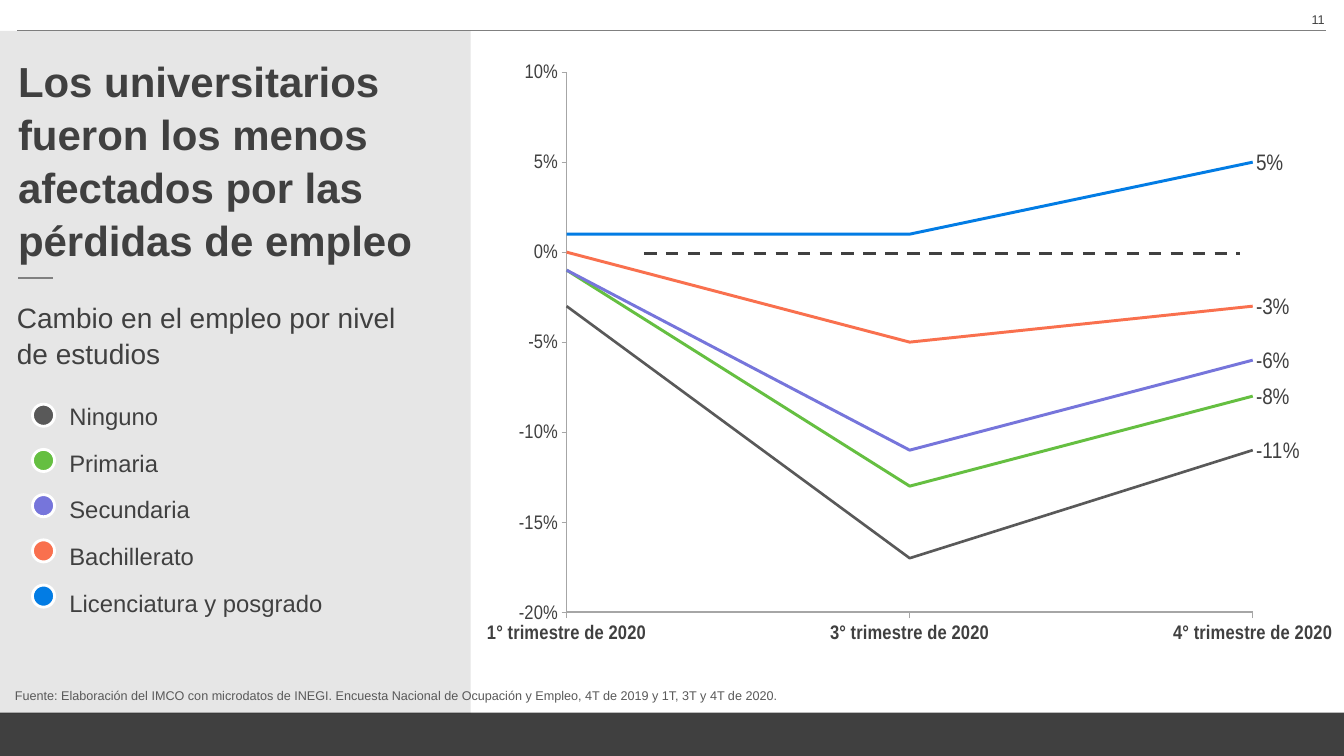
"""Build the slide on employment change by level of education."""
from dataclasses import dataclass

from lxml.etree import SubElement
from pptx import Presentation
from pptx.chart.data import CategoryChartData
from pptx.dml.color import RGBColor
from pptx.enum.chart import XL_AXIS_CROSSES as Crosses
from pptx.enum.chart import XL_CHART_TYPE as ChartType
from pptx.enum.chart import XL_LABEL_POSITION as LabelPosition
from pptx.enum.chart import XL_MARKER_STYLE as Marker
from pptx.enum.chart import XL_TICK_LABEL_POSITION as TickLabels
from pptx.enum.chart import XL_TICK_MARK as Tick
from pptx.enum.dml import MSO_LINE as Dash
from pptx.enum.shapes import MSO_CONNECTOR as Connector
from pptx.enum.shapes import MSO_SHAPE as Shape
from pptx.enum.text import MSO_ANCHOR as Anchor
from pptx.enum.text import PP_ALIGN as Align
from pptx.oxml import parse_xml
from pptx.oxml.ns import nsdecls, qn
from pptx.util import Pt


@dataclass(frozen=True)
class Theme:
    font: str = "Arial"
    ink: str = "404040"
    note_ink: str = "595959"
    rule: str = "808080"
    axis: str = "A6A6A6"
    panel: str = "0D0D0D"
    white: str = "FFFFFF"
    title: int = 30
    subtitle: int = 20
    legend: int = 17
    label: int = 16
    tick: int = 14
    small: int = 9


THEME = Theme()
QUARTERS = ["1° trimestre de 2020", "3° trimestre de 2020", "4° trimestre de 2020"]
LEVELS = [
    ("Ninguno", "595959", (-0.03, -0.17, -0.11)),
    ("Primaria", "65BF41", (-0.01, -0.13, -0.08)),
    ("Secundaria", "7675DB", (-0.01, -0.11, -0.06)),
    ("Bachillerato", "F9704E", (0, -0.05, -0.03)),
    ("Licenciatura y posgrado", "027CE4", (0.01, 0.01, 0.05)),
]


def apply(target, values):
    """Set each attribute of the target from a dict."""
    for name, value in values.items():
        setattr(target, name, value)


def style_font(font, size, color=THEME.ink, bold=False):
    """Give a font the theme typeface, a size, a colour and a weight."""
    apply(font, {"name": THEME.font, "size": Pt(size), "bold": bold})
    font.color.rgb = RGBColor.from_string(color)


def style_line(line, color, width):
    """Give a line a solid colour and a width."""
    line.color.rgb = RGBColor.from_string(color)
    line.width = Pt(width)


def add_block(page, kind, frame, color, opacity=None, outline=None):
    """Add a filled preset shape, with an outline only when asked."""
    block = page.shapes.add_shape(kind, *map(Pt, frame))
    block.shadow.inherit = False
    block.fill.solid()
    block.fill.fore_color.rgb = RGBColor.from_string(color)
    if opacity:
        tone = block.fill._xPr.find(f".//{qn('a:srgbClr')}")
        SubElement(tone, qn("a:alpha"), val=str(opacity * 1000))
    if outline:
        style_line(block.line, outline, 2)
    else:
        block.line.fill.background()


def add_rule(page, left, right, top, color, width, dash=None):
    """Add a horizontal line."""
    rule = page.shapes.add_connector(
        Connector.STRAIGHT, Pt(left), Pt(top), Pt(right), Pt(top))
    SubElement(rule._element.spPr, qn("a:effectLst"))
    style_line(rule.line, color, width)
    if dash:
        rule.line.dash_style = dash


def add_text(page, frame, lines, size, color=THEME.ink, bold=False,
             anchor=Anchor.TOP, **layout):
    """Add a wrapped text box with one paragraph per line."""
    box = page.shapes.add_textbox(*map(Pt, frame))
    apply(box.text_frame, {"word_wrap": True, "vertical_anchor": anchor})
    box.text_frame.text = "\n".join(lines)
    for para in box.text_frame.paragraphs:
        apply(para, layout)
        for span in para.runs:
            style_font(span.font, size, color, bold)


def place_plot(chart):
    """Fix the inner plot area inside the chart frame."""
    area = chart._chartSpace.chart.plotArea
    for layout in area.findall(qn("c:layout")):
        area.remove(layout)
    parts = {"layoutTarget": "inner", "xMode": "edge", "yMode": "edge",
             "x": 0.02, "y": 0.135, "w": 0.961, "h": 0.734}
    marks = "".join(f'<c:{name} val="{value}"/>' for name, value in parts.items())
    area.insert(0, parse_xml(
        f'<c:layout {nsdecls("c")}><c:manualLayout>{marks}</c:manualLayout></c:layout>'))


def style_axes(chart):
    """Set scale, ticks, lines and lettering of both axes."""
    values, quarters = chart.value_axis, chart.category_axis
    apply(values, {"minimum_scale": -0.2, "maximum_scale": 0.1, "major_unit": 0.05,
                   "crosses": Crosses.MINIMUM})
    apply(values.tick_labels, {"number_format": "0%", "number_format_is_linked": False})
    for axis, bold, width in ((values, False, 0.75), (quarters, True, 1.25)):
        apply(axis, {"has_major_gridlines": False, "major_tick_mark": Tick.OUTSIDE,
                     "minor_tick_mark": Tick.NONE, "tick_label_position": TickLabels.LOW})
        style_font(axis.tick_labels.font, THEME.tick, bold=bold)
        style_line(axis.format.line, THEME.axis, width)
    element = values._element
    for between in element.findall(qn("c:crossBetween")):
        element.remove(between)
    element.find(qn("c:crosses")).addnext(
        parse_xml(f'<c:crossBetween {nsdecls("c")} val="midCat"/>'))


def style_series(series, color, width):
    """Colour one line and label its last point."""
    series.smooth = False
    series.marker.style = Marker.NONE
    style_line(series.format.line, color, width)
    series.data_labels.show_value = False
    label = series.points[len(QUARTERS) - 1].data_label
    style_font(label.font, THEME.label)
    label.position = LabelPosition.RIGHT


def add_line_chart(page, frame):
    """Add the line chart of employment change."""
    data = CategoryChartData(number_format="0%")
    data.categories = QUARTERS
    for name, _, values in LEVELS:
        data.add_series(name, values)
    chart = page.shapes.add_chart(ChartType.LINE, *map(Pt, frame), data).chart
    apply(chart, {"has_title": False, "has_legend": False})
    style_font(chart.font, THEME.label)
    chart.plots[0].vary_by_categories = False
    place_plot(chart)
    style_axes(chart)
    for index, (series, (_, color, _)) in enumerate(zip(chart.plots[0].series, LEVELS)):
        style_series(series, color, 2.5 if index else 2.25)


def add_legend(page):
    """Add the level names, each with its coloured dot."""
    add_text(page, (42.5, 282.2, 244.8, 195), [name for name, _, _ in LEVELS],
             THEME.legend, space_after=Pt(12), line_spacing=1.05)
    for index, (_, color, _) in enumerate(LEVELS):
        add_block(page, Shape.OVAL, (23.2, 288.7 + 32.3 * index, 15.8, 15.8),
                  color, outline=THEME.white)


def main():
    """Build and save the deck."""
    deck = Presentation()
    apply(deck, {"slide_width": Pt(960), "slide_height": Pt(540)})
    page = deck.slides.add_slide(deck.slide_layouts[6])
    add_block(page, Shape.RECTANGLE, (0, 509, 960, 31), THEME.ink)
    add_rule(page, 12.2, 947.5, 22, THEME.rule, 0.75)
    add_block(page, Shape.RECTANGLE, (0, 22, 336.2, 488), THEME.panel, opacity=10)
    add_text(page, (737.3, 5, 216, 28.8), ["11"], THEME.small, alignment=Align.RIGHT)
    add_text(page, (5.8, 34.6, 338.4, 118.8),
             ["Los universitarios fueron los menos afectados por las pérdidas de empleo"],
             THEME.title, bold=True, line_spacing=1.05)
    add_text(page, (3.6, 486.7, 935.3, 19.4),
             ["Fuente: Elaboración del IMCO con microdatos de INEGI. Encuesta Nacional de "
              "Ocupación y Empleo, 4T de 2019 y 1T, 3T y 4T de 2020."],
             THEME.small, THEME.note_ink, anchor=Anchor.BOTTOM)
    add_line_chart(page, (347.8, -19.4, 604, 525.6))
    add_rule(page, 460, 885.6, 180.8, THEME.ink, 2.25, Dash.DASH)
    add_rule(page, 13, 38.2, 198.7, THEME.rule, 1.5)
    add_text(page, (5, 210.2, 301, 55.4), ["Cambio en el empleo por nivel de estudios"],
             THEME.subtitle, line_spacing=1.05)
    add_legend(page)
    deck.save("out.pptx")


if __name__ == "__main__":
    main()
